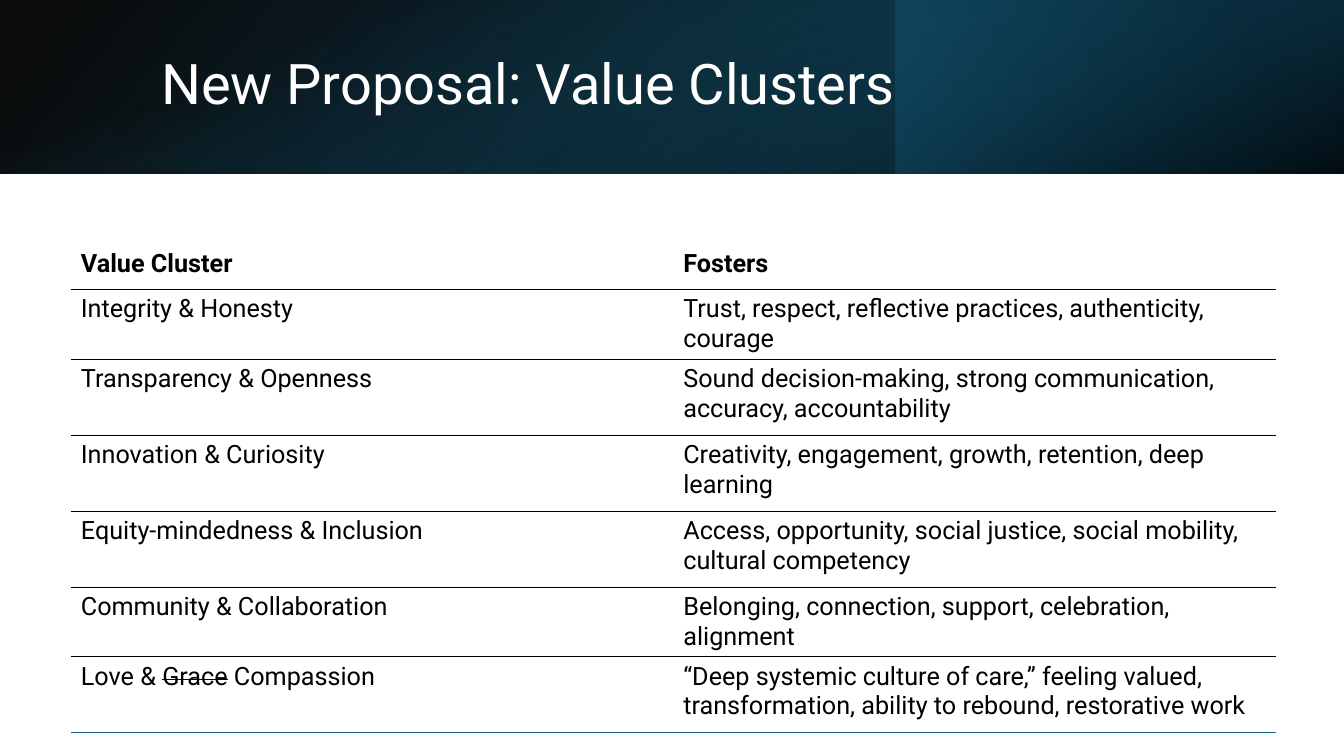
from lxml import etree
from pptx import Presentation
from pptx.dml.color import RGBColor
from pptx.enum.shapes import MSO_SHAPE
from pptx.enum.text import MSO_ANCHOR
from pptx.oxml import parse_xml
from pptx.oxml.ns import nsdecls, qn
from pptx.util import Pt

RECT = MSO_SHAPE.RECTANGLE
MIDDLE = MSO_ANCHOR.MIDDLE
FONT = "Roboto"
NO_GRID_STYLE = "{2D5ABB26-0587-4C30-8999-92F81FD0307C}"
COLORS = {"black": "000000", "white": "FFFFFF", "teal": "156082",
          "deep": "104862", "navy": "0B3041"}
WIDTH, HEIGHT, BANNER = 960, 540, 124


def set_gradient(sp, stops, angle):
    fill = parse_xml(f'<a:gradFill {nsdecls("a")} rotWithShape="1"><a:gsLst/>'
                     f'<a:lin ang="{angle * 60000}" scaled="0"/></a:gradFill>')
    for pos, color, alpha in stops:
        gs = etree.SubElement(fill[0], qn("a:gs"), pos=str(pos * 1000))
        clr = etree.SubElement(gs, qn("a:srgbClr"), val=COLORS[color])
        etree.SubElement(clr, qn("a:alpha"), val=str(alpha * 1000))
    sp.element.spPr.find(qn("a:prstGeom")).addnext(fill)


def set_border(cell, side, color, width):
    tc_pr = cell._tc.get_or_add_tcPr()
    ln = parse_xml(f'<a:{side} {nsdecls("a")} w="{Pt(width)}"><a:solidFill>'
                   f'<a:srgbClr val="{COLORS[color]}"/></a:solidFill></a:{side}>')
    tc_pr.insert(0, ln)


prs = Presentation()
prs.slide_width, prs.slide_height = Pt(WIDTH), Pt(HEIGHT)
s = prs.slides.add_slide(prs.slide_layouts[5])

side = (WIDTH - BANNER) / 2
banner_layers = [
    (0, 0, WIDTH, BANNER, 0, True,
     [(0, "black", 96), (100, "deep", 100)], 140),
    (640, 0, 320, BANNER, 180, False,
     [(19, "navy", 68), (100, "teal", 79)], 320),
    (side, -side, BANNER, WIDTH, 90, False,
     [(23, "teal", 0), (99, "black", 74)], 340),
]
for x, y, w, h, rotation, flipped, stops, angle in banner_layers:
    sp = s.shapes.add_shape(RECT, Pt(x), Pt(y), Pt(w), Pt(h))
    sp.shadow.inherit = False
    sp.line.fill.background()
    sp.rotation = rotation
    if flipped:
        sp.element.spPr.find(qn("a:xfrm")).set("flipH", "1")
    set_gradient(sp, stops, angle)

title = s.shapes.title
title.element.getparent().append(title.element)
title.left, title.top, title.width, title.height = Pt(108), Pt(27.4), Pt(790.6), Pt(69)
tf = title.text_frame
tf.word_wrap = True
tf.vertical_anchor = MIDDLE
p = tf.paragraphs[0]
p.text = "New Proposal: Value Clusters"
p.alignment = 1
p.line_spacing = 0.9
p.font.name = FONT
p.font.size = Pt(40)
p.font.color.rgb = RGBColor.from_string(COLORS["white"])

rows = [
    ("Value Cluster", "Fosters"),
    ("Integrity & Honesty",
     "Trust, respect, reflective practices, authenticity, courage"),
    ("Transparency & Openness",
     "Sound decision-making, strong communication, accuracy, accountability"),
    ("Innovation & Curiosity",
     "Creativity, engagement, growth, retention, deep learning"),
    ("Equity-mindedness & Inclusion",
     "Access, opportunity, social justice, social mobility, cultural competency"),
    ("Community & Collaboration",
     "Belonging, connection, support, celebration, alignment"),
    ("Love & ~Grace~ Compassion",
     "“Deep systemic culture of care,” feeling valued, transformation, "
     "ability to rebound, restorative work"),
]
row_heights = [32.4, 49.7, 54.3, 54.3, 54.3, 49.7, 54.3]
last = len(rows) - 1
frame = s.shapes.add_table(len(rows), 2, Pt(50.6), Pt(174.4), Pt(860.6), Pt(sum(row_heights)))
table = frame.table
table._tbl.tblPr.find(qn("a:tableStyleId")).text = NO_GRID_STYLE
table.horz_banding = False
for column in table.columns:
    column.width = Pt(430.3)

for i, (texts, height) in enumerate(zip(rows, row_heights)):
    table.rows[i].height = Pt(height)
    for j, text in enumerate(texts):
        cell = table.cell(i, j)
        cell.fill.background()
        p = cell.text_frame.paragraphs[0]
        for k, part in enumerate(text.split("~")):
            r = p.add_run()
            r.text = part
            if k == 1:
                r.font._element.set("strike", "sngStrike")
        p.font.name = FONT
        p.font.size = Pt(18)
        p.font.bold = i == 0
        p.font.color.rgb = RGBColor.from_string(COLORS["black"])
        if i == last:
            set_border(cell, "lnB", "teal", 1)
        else:
            set_border(cell, "lnB", "black", 0.25)
        if i > 0:
            set_border(cell, "lnT", "black", 0.25)

prs.save("out.pptx")
